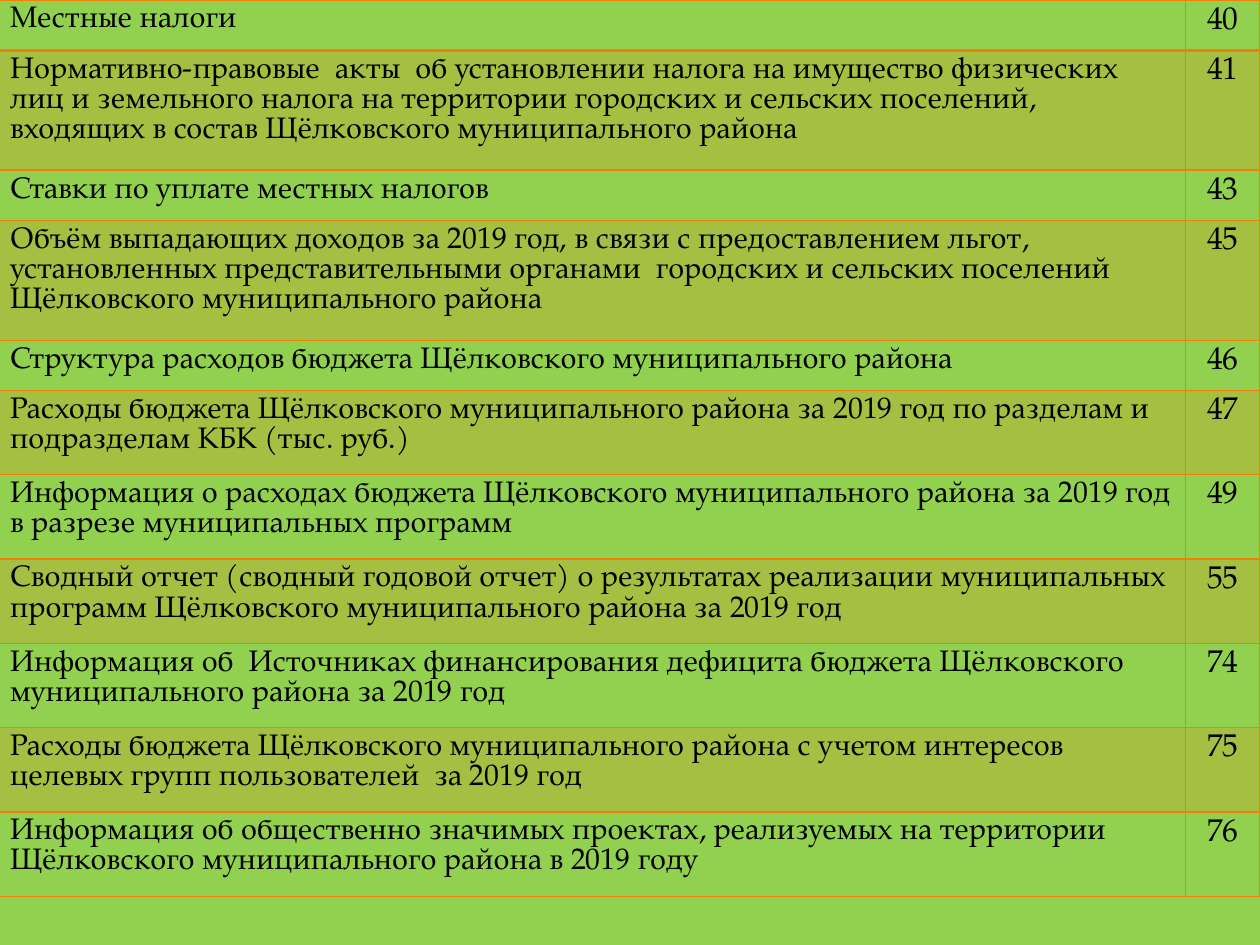
from lxml.etree import SubElement
from pptx import Presentation
from pptx.dml.color import RGBColor
from pptx.enum.text import PP_ALIGN
from pptx.oxml.ns import qn
from pptx.util import Cm, Pt

COLORS = {"background": "92D050", "accent": "F07F09", "text": "000000"}
FONT = "TeX Gyre Pagella"
HEIGHT_BY_LINES = {1: 1.01, 2: 1.7, 3: 2.42}
PAGE_COLUMN = 1.5
CONTENTS = [
    ("Местные налоги", 40, 1),
    ("Нормативно-правовые  акты  об установлении налога на имущество физических "
     "лиц и земельного налога на территории городских и сельских поселений, "
     "входящих в состав Щёлковского муниципального района", 41, 3),
    ("Ставки по уплате местных налогов", 43, 1),
    ("Объём выпадающих доходов за 2019 год, в связи с предоставлением льгот, "
     "установленных представительными органами  городских и сельских поселений "
     "Щёлковского муниципального района", 45, 3),
    ("Структура расходов бюджета Щёлковского муниципального района", 46, 1),
    ("Расходы бюджета Щёлковского муниципального района за 2019 год по разделам и "
     "подразделам КБК (тыс. руб.)", 47, 2),
    ("Информация о расходах бюджета Щёлковского муниципального района за 2019 год "
     "в разрезе муниципальных программ", 49, 2),
    ("Сводный отчет (сводный годовой отчет) о результатах реализации муниципальных "
     "программ Щёлковского муниципального района за 2019 год", 55, 2),
    ("Информация об  Источниках финансирования дефицита бюджета Щёлковского "
     "муниципального района за 2019 год", 74, 2),
    ("Расходы бюджета Щёлковского муниципального района с учетом интересов "
     "целевых групп пользователей  за 2019 год", 75, 2),
    ("Информация об общественно значимых проектах, реализуемых на территории "
     "Щёлковского муниципального района в 2019 году", 76, 2),
]


def write_text(frame, text, size=17, align=PP_ALIGN.LEFT, color="text"):
    """Write one formatted paragraph into a text frame."""
    paragraph = frame.paragraphs[0]
    paragraph.alignment = align
    run = paragraph.add_run()
    run.text = text
    run.font.size = Pt(size)
    run.font.name = FONT
    run.font.color.rgb = RGBColor.from_string(COLORS[color])


def draw_borders(cell, top=1, bottom=1):
    """Outline a cell in the accent colour with widths in points."""
    properties = cell._tc.get_or_add_tcPr()
    for side, width in (("L", 1), ("R", 1), ("T", top), ("B", bottom)):
        line = SubElement(properties, qn(f"a:ln{side}"), w=str(Pt(width)))
        fill = SubElement(line, qn("a:solidFill"))
        SubElement(fill, qn("a:srgbClr"), val=COLORS["accent"])


def fill_cell(cell, shaded):
    """Tint a shaded cell with the translucent accent or leave it clear."""
    if not shaded:
        cell.fill.background()
        return
    cell.fill.solid()
    cell.fill.fore_color.rgb = RGBColor.from_string(COLORS["accent"])
    tint = cell._tc.tcPr.find(qn("a:solidFill")).find(qn("a:srgbClr"))
    SubElement(tint, qn("a:alpha"), val="20000")


def add_contents(slide, left, top, width):
    """Place the table of contents with titles and page numbers."""
    heights = [HEIGHT_BY_LINES[lines] for _, _, lines in CONTENTS]
    table = slide.shapes.add_table(
        len(CONTENTS), 2, Cm(left), Cm(top), Cm(width), Cm(sum(heights))).table
    table.first_row = table.horz_banding = False
    table.columns[0].width = Cm(width - PAGE_COLUMN)
    table.columns[1].width = Cm(PAGE_COLUMN)
    for index, (title, page, _) in enumerate(CONTENTS):
        table.rows[index].height = Cm(heights[index])
        title_cell, page_cell = table.rows[index].cells
        write_text(title_cell.text_frame, title)
        write_text(page_cell.text_frame, str(page), size=18, align=PP_ALIGN.CENTER)
        for cell in (title_cell, page_cell):
            draw_borders(cell, top=2 if index == 1 else 1, bottom=2 if index == 0 else 1)
            fill_cell(cell, shaded=index % 2 == 1)


def main():
    """Build the contents slide and save it."""
    presentation = Presentation()
    presentation.slide_width, presentation.slide_height = Cm(25.4), Cm(19.05)
    slide = presentation.slides.add_slide(presentation.slide_layouts[6])
    slide.background.fill.solid()
    slide.background.fill.fore_color.rgb = RGBColor.from_string(COLORS["background"])
    add_contents(slide, left=-0.05, top=0, width=25.45)
    presentation.save("out.pptx")


if __name__ == "__main__":
    main()
